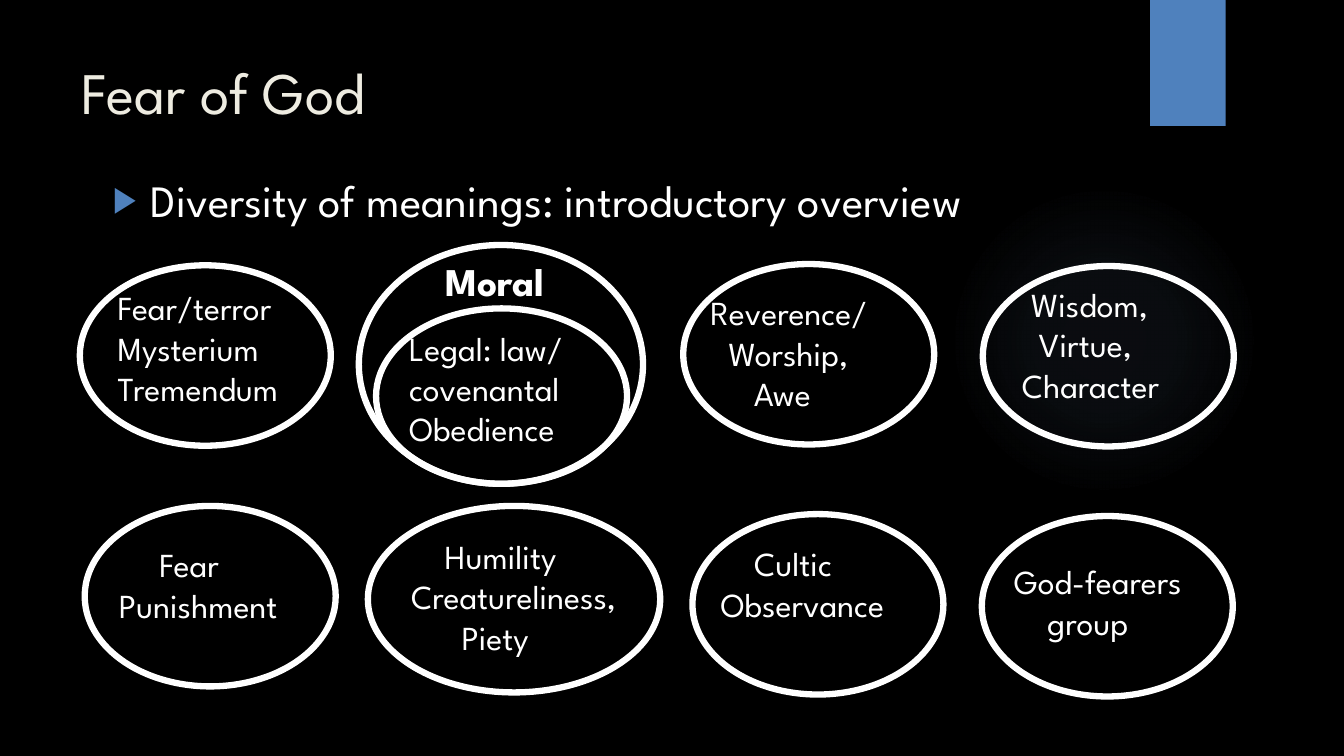
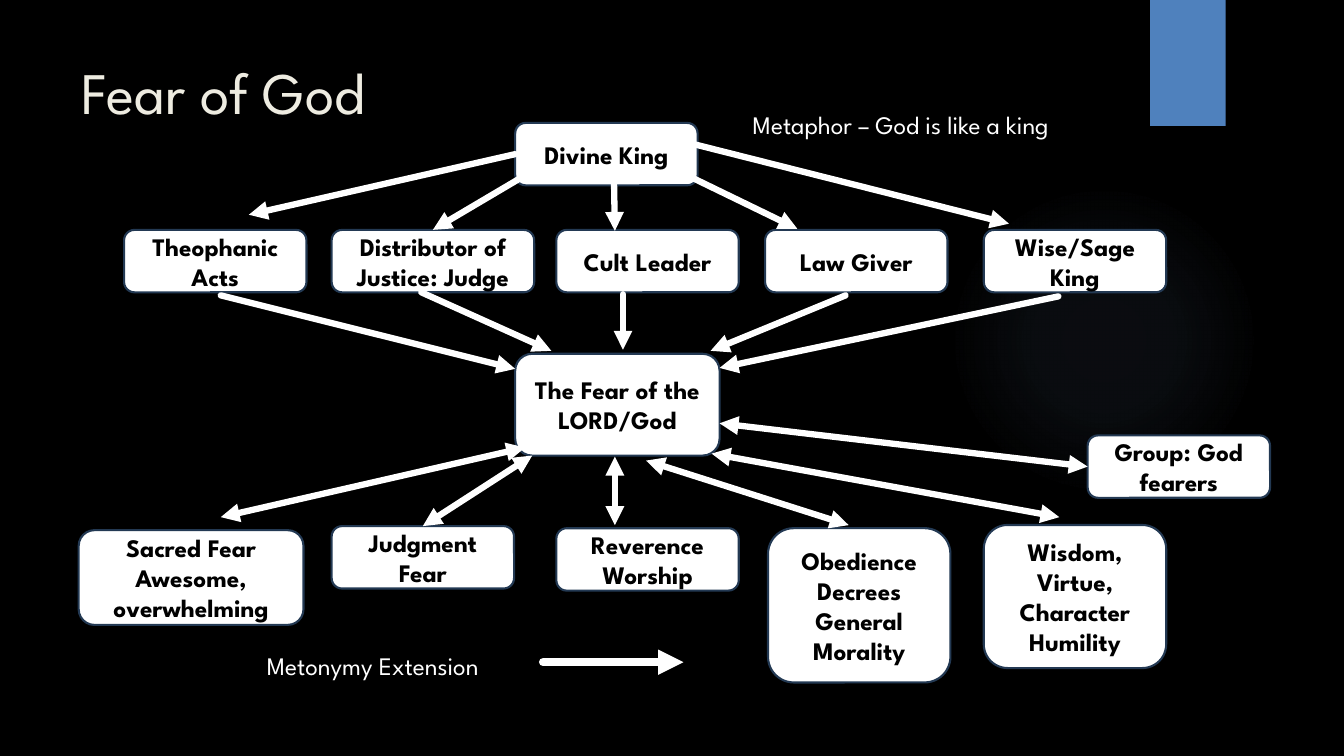
from lxml import etree
from pptx import Presentation
from pptx.dml.color import RGBColor
from pptx.enum import shapes, text
from pptx.oxml import ns, parse_xml
from pptx.util import Pt

FONT = "League Spartan"
HUES = {"back": "000000", "title": "EEECE1", "white": "FFFFFF", "black": "000000",
        "accent": "4F81BD", "glow": "8EB4E3", "edge": "233953"}
TITLE = "Fear of God"
TOPIC = "Diversity of meanings: introductory overview"

# Oval: (left, top, width, height)
OVAL = (179.3, 128.9)
OVALS = [
    (57, 189.5, *OVAL), (488, 188.6, *OVAL), (702, 190, *OVAL),
    (60.5, 361.4, *OVAL), (262.8, 361.4, 208.8, 133.2),
    (494.6, 367.2, *OVAL), (701.3, 368.6, *OVAL),
    (256.3, 175, 203, 170.6), (268.6, 220.3, 179.3, 125.3),
]
# Meaning: left, top, width, then lines with their indents
MEANINGS = [
    (77, 201.6, 156, [("Fear/terror", 0), ("Mysterium", 0), ("Tremendum", 0)]),
    (500.4, 205.2, 161, [("Reverence/", 0), ("Worship,", 13), ("Awe", 31)]),
    (722.9, 199.4, 136, [("Wisdom,", 6.5), ("Virtue,", 12), ("Character", 0)]),
    (77.8, 385.2, 149, [("Fear", 29), ("Punishment", 0)]),
    (286.6, 379.4, 186, [("Humility", 24), ("Creatureliness,", 0), ("Piety", 36)]),
    (507.6, 384.5, 161, [("Cultic", 24), ("Observance", 0)]),
    (717.1, 397.4, 156, [("God-fearers", 0), ("group", 24)]),
    (285.1, 230.4, 151, [("Legal: law/", 0), ("covenantal", 0), ("Obedience", 0)]),
]

# Box: name -> (text, left, top, width, height)
BOX = (130.3, 44.6)
ROW = 164.2
BOXES = {
    "king": ("Divine King", 368, 87.8, *BOX),
    "acts": ("Theophanic Acts", 88.6, ROW, *BOX),
    "judge": ("Distributor of Justice: Judge", 236.9, ROW, 144.7, 44.6),
    "cult": ("Cult Leader", 397.4, ROW, *BOX),
    "law": ("Law Giver", 546.5, ROW, *BOX),
    "sage": ("Wise/Sage King", 702.7, ROW, *BOX),
    "fear": ("The Fear of the LORD/God", 368, 252.7, 146, 72.7),
    "wisdom": ("Wisdom, Virtue, Character\nHumility", 702.7, 375, 130.3, 102.2),
    "duty": ("Obedience\nDecrees\nGeneral Morality", 548.6, 377.3, 130.3, 110.2),
    "awe": ("Reverence Worship", 397.4, 377.3, *BOX),
    "dread": ("Judgment Fear", 236.9, 375.8, *BOX),
    "sacred": ("Sacred Fear\nAwesome,\noverwhelming", 56.2, 378.7, 160.6, 67.7),
    "group": ("Group: God fearers", 776.9, 311, *BOX),
}
NOTES = [("Metaphor – God is like a king", 530.6, 74.2, 270),
         ("Metonymy Extension", 183.6, 460.8, 199)]

# An arrow's end is a point, or a box name with the side it joins
TOP, LEFT = 0, 1
ONE_WAY = [
    (("king", LEFT), (177.8, 153.4)),
    ((157.7, 211), (368, 263.5)),
    ((375, 125.3), ("judge", TOP)),
    ((438.5, 123.8), (439.2, 164.9)),
    ((491, 125.3), (569.5, 163.4)),
    ((492.5, 102.2), (720.7, 159.8)),
    ((301, 208.8), (393.8, 250.6)),
    ((445, 210.2), (445, 249.8)),
    ((604, 211), (507.6, 250.6)),
    ((756, 211.7), (514, 262.8)),
]
TWO_WAY = [
    ((514, 302.4), ("group", LEFT)),
    ((508.3, 324), (756.7, 369.4)),
    ((461.5, 329), (606.2, 375.1)),
    ((439.2, 326.2), (439.2, 375.1)),
    ((380.2, 325.4), ("dread", TOP)),
    ((157.7, 369.4), (375.1, 319.7)),
]
KEY = ((388, 473), (488.2, 473))


def rgb(name):
    return RGBColor.from_string(HUES[name])


def style(frame, size, hue, bold=False):
    for para in frame.paragraphs:
        for run in para.runs:
            font = run.font
            font.name, font.size, font.bold = FONT, Pt(size), bold
            font.color.rgb = rgb(hue)


def place(item, left, top, width, height):
    item.left, item.top = Pt(left), Pt(top)
    item.width, item.height = Pt(width), Pt(height)


def shape(slide, kind, spot, fill=None, line=None, weight=0):
    item = slide.shapes.add_shape(kind, *map(Pt, spot))
    item.shadow.inherit = False
    if fill:
        item.fill.solid()
        item.fill.fore_color.rgb = rgb(fill)
    else:
        item.fill.background()
    if line:
        item.line.color.rgb = rgb(line)
        item.line.width = Pt(weight)
    else:
        item.line.fill.background()
    return item


def label(slide, words, left, top, width, size, bold=False):
    rows = words.count("\n") + 1
    box = slide.shapes.add_textbox(*map(Pt, (left, top, width, rows * size * 1.2 + 7.2)))
    frame = box.text_frame
    frame.word_wrap = True
    frame.text = words
    style(frame, size, "white", bold)
    return frame


def arrow(slide, ends, boxes, both=False, weight=4.5):
    spots = [end if end[0] not in boxes else (0, 0) for end in ends]
    line = slide.shapes.add_connector(shapes.MSO_CONNECTOR.STRAIGHT,
                                      *map(Pt, spots[0] + spots[1]))
    for end, join in zip(ends, (line.begin_connect, line.end_connect)):
        if end[0] in boxes:
            join(boxes[end[0]], end[1])
    line.line.color.rgb = rgb("white")
    line.line.width = Pt(weight)
    props = line.element.spPr
    stroke = props.find(ns.qn("a:ln"))
    stroke.set("cap", "rnd")
    for tip in ("a:headEnd", "a:tailEnd") if both else ("a:tailEnd",):
        etree.SubElement(stroke, ns.qn(tip), type="triangle")
    etree.SubElement(props, ns.qn("a:effectLst"))


def dress(master, slide):
    """Give the master its background, glow and tab, drawn by way of a slide."""
    master.background.fill.solid()
    master.background.fill.fore_color.rgb = rgb("back")
    glow = shape(slide, shapes.MSO_SHAPE.OVAL, (677.5, 131.8, 221.8, 221.8))
    stops = "".join(
        f'<a:gs pos="{pos}000"><a:srgbClr val="{HUES["glow"]}">'
        f'<a:alpha val="{alpha}000"/></a:srgbClr></a:gs>'
        for pos, alpha in ((0, 7), (36, 6), (69, 0), (100, 0)))
    props = glow.element.spPr
    props.replace(props.find(ns.qn("a:noFill")), parse_xml(
        f'<a:gradFill {ns.nsdecls("a")}><a:gsLst>{stops}</a:gsLst><a:path path="circle">'
        '<a:fillToRect l="50000" t="50000" r="50000" b="50000"/></a:path></a:gradFill>'))
    tab = shape(slide, shapes.MSO_SHAPE.RECTANGLE, (821.5, 0, 54, 90), "accent")
    for at, item in enumerate((glow, tab), 2):
        master.shapes.element.insert(at, item.element)


def start(deck, layout):
    slide = deck.slides.add_slide(deck.slide_layouts[layout])
    title = slide.shapes.title
    place(title, 51, 36, 741, 110)
    frame = title.text_frame
    frame.text = TITLE
    frame.auto_size = text.MSO_AUTO_SIZE.NONE
    frame.vertical_anchor = text.MSO_ANCHOR.TOP
    frame.paragraphs[0].alignment = text.PP_ALIGN.LEFT
    style(frame, 42, "title")
    return slide


def indent(para, left, hang=0):
    props = para._p.get_or_add_pPr()
    props.set("marL", str(Pt(left)))
    props.set("indent", str(Pt(-hang)))
    return props


def overview(slide):
    body = slide.placeholders[1]
    place(body, 73.4, 119.5, 776, 330.5)
    frame = body.text_frame
    frame.text = TOPIC
    para = frame.paragraphs[0]
    props = indent(para, 27, 27)
    hue = etree.SubElement(props, ns.qn("a:buClr"))
    etree.SubElement(hue, ns.qn("a:srgbClr"), val=HUES["accent"])
    etree.SubElement(props, ns.qn("a:buSzPct"), val="80000")
    etree.SubElement(props, ns.qn("a:buChar"), char="▶")
    para.space_before = Pt(0)
    style(frame, 32, "white")
    for spot in OVALS:
        shape(slide, shapes.MSO_SHAPE.OVAL, spot, line="white", weight=4.5)
    for left, top, width, lines in MEANINGS:
        frame = label(slide, "\n".join(line for line, _ in lines), left, top, width, 24)
        for para, (_, inset) in zip(frame.paragraphs, lines):
            indent(para, inset)
    label(slide, "Moral", 311, 180, 110, 28, True)


def diagram(slide):
    boxes = {}
    for name, (words, *spot) in BOXES.items():
        box = shape(slide, shapes.MSO_SHAPE.ROUNDED_RECTANGLE, spot, "white", "edge", 1.5)
        frame = box.text_frame
        frame.word_wrap = True
        frame.vertical_anchor = text.MSO_ANCHOR.MIDDLE
        frame.text = words
        for para in frame.paragraphs:
            para.alignment = text.PP_ALIGN.CENTER
        style(frame, 18, "black", True)
        boxes[name] = box
    for note in NOTES:
        label(slide, *note, 18)
    arrow(slide, KEY, boxes, weight=6)
    for both, pairs in ((False, ONE_WAY), (True, TWO_WAY)):
        for ends in pairs:
            arrow(slide, ends, boxes, both)


def main():
    deck = Presentation()
    deck.slide_width, deck.slide_height = Pt(960), Pt(540)
    first = start(deck, 1)
    dress(deck.slide_master, first)
    overview(first)
    diagram(start(deck, 5))
    deck.save("out.pptx")


if __name__ == "__main__":
    main()
